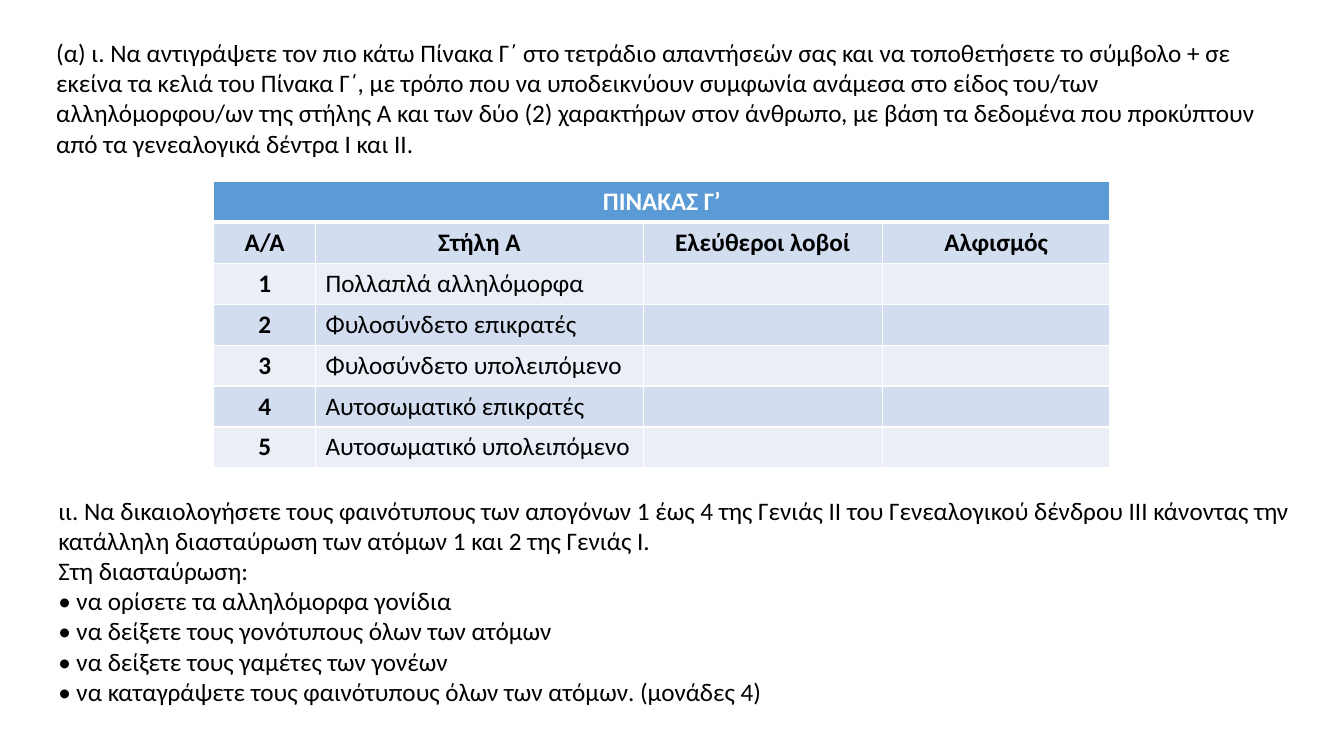
from lxml import etree
from pptx import Presentation
from pptx.dml.color import RGBColor
from pptx.enum import text
from pptx.oxml.ns import qn
from pptx.util import Inches, Pt

INTRO = [
    "(α) ι. Να αντιγράψετε τον πιο κάτω Πίνακα Γ΄ στο τετράδιο απαντήσεών σας και να τοποθετήσετε "
    "το σύμβολο + σε εκείνα τα κελιά του Πίνακα Γ΄, με τρόπο που να υποδεικνύουν συμφωνία ανάμεσα "
    "στο είδος του/των αλληλόμορφου/ων της στήλης Α και των δύο (2) χαρακτήρων στον άνθρωπο, με βάση "
    "τα δεδομένα που προκύπτουν από τα γενεαλογικά δέντρα Ι και II.",
]
TABLE_TITLE = "ΠΙΝΑΚΑΣ Γ’"
HEADINGS = ["Α/Α", "Στήλη Α", "Ελεύθεροι λοβοί", "Αλφισμός"]
INHERITANCE_TYPES = [
    "Πολλαπλά αλληλόμορφα",
    "Φυλοσύνδετο επικρατές",
    "Φυλοσύνδετο υπολειπόμενο",
    "Αυτοσωματικό επικρατές",
    "Αυτοσωματικό υπολειπόμενο",
]
CROSS_TASK = [
    "ιι. Να δικαιολογήσετε τους φαινότυπους των απογόνων 1 έως 4 της Γενιάς II του Γενεαλογικού "
    "δένδρου III κάνοντας την κατάλληλη διασταύρωση των ατόμων 1 και 2 της Γενιάς I.",
    "Στη διασταύρωση:",
    "• να ορίσετε τα αλληλόμορφα γονίδια",
    "• να δείξετε τους γονότυπους όλων των ατόμων",
    "• να δείξετε τους γαμέτες των γονέων",
    "• να καταγράψετε τους φαινότυπους όλων των ατόμων. (μονάδες 4)",
]
TEXT_BOXES = [
    (INTRO, (0.46, 0.32, 12.46, 4.64)),
    (CROSS_TASK, (0.48, 4.86, 12.46, 2.22)),
]
TABLE_LEFT, TABLE_TOP = 2.12, 1.8
COLUMN_WIDTHS = [1.01, 3.25, 2.37, 2.26]
ROW_HEIGHT = 0.406
THEME = {
    "font": "Calibri",
    "size": 18,
    "text": "000000",
    "title_text": "FFFFFF",
    "title_fill": "5B9BD5",
    "bands": ["EAEFF7", "D2DEEF"],
    "border": "FFFFFF",
    "thin": 1,
    "thick": 3,
}


def write(frame, lines, color=THEME["text"], bold=False, align=text.PP_ALIGN.LEFT):
    for index, line in enumerate(lines):
        paragraph = frame.paragraphs[0] if index == 0 else frame.add_paragraph()
        paragraph.alignment = align
        run = paragraph.add_run()
        run.text = line
        run.font.name = THEME["font"]
        run.font.size = Pt(THEME["size"])
        run.font.bold = bold
        run.font.color.rgb = RGBColor.from_string(color)


def add_text_box(slide, lines, box):
    frame = slide.shapes.add_textbox(*map(Inches, box)).text_frame
    frame.word_wrap = True
    write(frame, lines)


def style_cell(cell, fill, top, bottom):
    cell.fill.solid()
    cell.fill.fore_color.rgb = RGBColor.from_string(fill)
    properties = cell._tc.get_or_add_tcPr()
    widths = {"a:lnL": THEME["thin"], "a:lnR": THEME["thin"], "a:lnT": top, "a:lnB": bottom}
    for index, (side, width) in enumerate(widths.items()):
        line = etree.Element(qn(side), w=str(Pt(width)))
        solid = etree.SubElement(line, qn("a:solidFill"))
        etree.SubElement(solid, qn("a:srgbClr"), val=THEME["border"])
        properties.insert(index, line)


def add_inheritance_table(slide):
    rows = [[TABLE_TITLE, "", "", ""], HEADINGS]
    rows += [[str(number), name, "", ""] for number, name in enumerate(INHERITANCE_TYPES, 1)]
    bounds = (TABLE_LEFT, TABLE_TOP, sum(COLUMN_WIDTHS), ROW_HEIGHT * len(rows))
    table = slide.shapes.add_table(len(rows), len(COLUMN_WIDTHS), *map(Inches, bounds)).table
    for column, width in zip(table.columns, COLUMN_WIDTHS):
        column.width = Inches(width)
    table.cell(0, 0).merge(table.cell(0, len(COLUMN_WIDTHS) - 1))

    for row, values in enumerate(rows):
        table.rows[row].height = Inches(ROW_HEIGHT)
        is_title = row == 0
        fill = THEME["title_fill"] if is_title else THEME["bands"][row % 2]
        top = THEME["thick"] if row == 1 else THEME["thin"]
        bottom = THEME["thick"] if is_title else THEME["thin"]
        for column, value in enumerate(values):
            cell = table.cell(row, column)
            style_cell(cell, fill, top, bottom)
            if value:
                strong = row < 2 or column == 0
                write(
                    cell.text_frame,
                    [value],
                    color=THEME["title_text"] if is_title else THEME["text"],
                    bold=strong,
                    align=text.PP_ALIGN.CENTER if strong else text.PP_ALIGN.LEFT,
                )


def main():
    presentation = Presentation()
    presentation.slide_width = Inches(13.33)
    presentation.slide_height = Inches(7.5)
    slide = presentation.slides.add_slide(presentation.slide_layouts[6])
    add_inheritance_table(slide)
    for lines, box in TEXT_BOXES:
        add_text_box(slide, lines, box)
    presentation.save("out.pptx")


if __name__ == "__main__":
    main()
